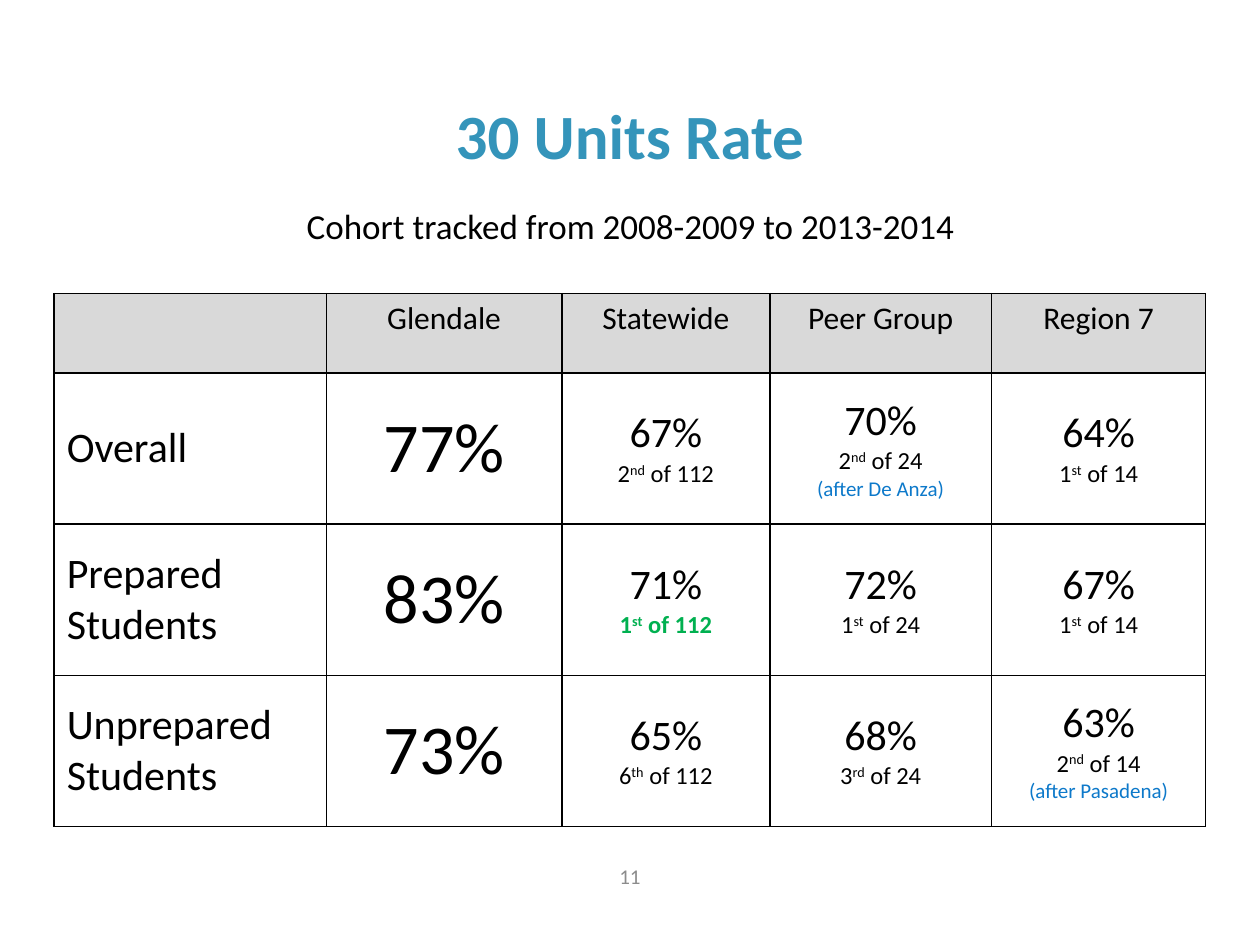
from lxml import etree
from pptx import Presentation, util as u
from pptx.dml.color import RGBColor
from pptx.enum import text
from pptx.oxml.ns import qn

COLS, ROWS = 100, 75
MID = text.PP_ALIGN.CENTER
LEFT = text.PP_ALIGN.LEFT
BLACK, BLUE, GREEN = "000000", "0D79CA", "00B050"

HEADS = ["", "Glendale", "Statewide", "Peer Group", "Region 7"]
RATES = [
    (["Overall"], "77%",
     ["67%", "2nd of 112"],
     ["70%", "2nd of 24", "(after De Anza)"],
     ["64%", "1st of 14"]),
    (["Prepared", "Students"], "83%",
     ["71%", "1st of 112"],
     ["72%", "1st of 24"],
     ["67%", "1st of 14"]),
    (["Unprepared", "Students"], "73%",
     ["65%", "6th of 112"],
     ["68%", "3rd of 24"],
     ["63%", "2nd of 14", "(after Pasadena)"]),
]
BEST = "1st of 112"


def color(code):
    return RGBColor.from_string(code)


class Deck:
    """Holds the style and the current slide; lengths are grid columns and rows."""

    face = "Calibri"

    def __init__(self):
        self.prs = Presentation()
        self.prs.slide_width = u.Inches(10)
        self.prs.slide_height = u.Inches(7.5)
        self.slide = self.prs.slides.add_slide(self.prs.slide_layouts[6])

    def col(self, n):
        return round(self.prs.slide_width * n / COLS)

    def row(self, n):
        return round(self.prs.slide_height * n / ROWS)

    def area(self, x, y, w, h):
        return self.col(x), self.row(y), self.col(w), self.row(h)

    def style(self, par, size, tint=BLACK, bold=False, align=MID):
        par.alignment = align
        font = par.font
        font.name, font.size, font.bold = self.face, u.Pt(size), bold
        font.color.rgb = color(tint)

    def label(self, words, x, y, w, h, size, wrap=True, anchor="TOP", **look):
        frame = self.slide.shapes.add_textbox(*self.area(x, y, w, h)).text_frame
        frame.word_wrap = wrap
        frame.vertical_anchor = text.MSO_ANCHOR[anchor]
        par = frame.paragraphs[0]
        par.add_run().text = words
        self.style(par, size, **look)
        return par

    def table(self, x, y, widths, heights):
        grid = self.slide.shapes.add_table(
            len(heights), len(widths),
            *self.area(x, y, sum(widths), sum(heights))).table
        grid.first_row = grid.horz_banding = False
        for part, n in zip(grid.columns, widths):
            part.width = self.col(n)
        for part, n in zip(grid.rows, heights):
            part.height = self.row(n)
        for cell in grid.iter_cells():
            self.border(cell)
            cell.fill.background()
        return grid

    def border(self, cell):
        props = cell._tc.get_or_add_tcPr()
        for side in ("lnL", "lnR", "lnT", "lnB"):
            line = etree.SubElement(props, qn("a:" + side), w=str(u.Pt(1)))
            fill = etree.SubElement(line, qn("a:solidFill"))
            etree.SubElement(fill, qn("a:srgbClr"), val=BLACK)

    def fill(self, cell, lines, anchor="MIDDLE"):
        """Write one paragraph for each (words, look) pair."""
        cell.vertical_anchor = text.MSO_ANCHOR[anchor]
        frame = cell.text_frame
        for i, (words, look) in enumerate(lines):
            par = frame.add_paragraph() if i else frame.paragraphs[0]
            if " of " in words:
                self.rank(par, words)
            elif words:
                par.add_run().text = words
            self.style(par, **look)

    def rank(self, par, words):
        """Raise the ordinal ending, as in 2nd."""
        place, rest = words.split(" ", 1)
        for piece in (place[:-2], place[-2:], " " + rest):
            run = par.add_run()
            run.text = piece
            if piece == place[-2:]:
                run._r.get_or_add_rPr().set("baseline", "30000")


def look(words):
    """Choose the style of a line in a comparison cell."""
    if words.startswith("("):
        return dict(size=12, tint=BLUE)
    if words == BEST:
        return dict(size=14, tint=GREEN, bold=True)
    return dict(size=14 if " of " in words else 24)


def main():
    deck = Deck()
    deck.label("30 Units Rate", 35, 7.2, 30, 7.1, 36,
               wrap=False, tint="3494BA", bold=True)
    deck.label("11", 40, 67.5, 20, 4, 12, anchor="MIDDLE", tint="8C8C8C")
    note = deck.label("Cohort tracked from 2008-2009 to 2013-2014",
                      10.3, 15.7, 79.5, 4.4, 20)
    note.space_after = u.Pt(24)

    grid = deck.table(4.3, 23.3, [21.6, 18.7, 16.5, 17.6, 17],
                      [6.3] + [12] * len(RATES))
    for i, head in enumerate(HEADS):
        cell = grid.cell(0, i)
        cell.fill.solid()
        cell.fill.fore_color.rgb = color("D9D9D9")
        deck.fill(cell, [(head, dict(size=18))], anchor="TOP")
    for j, (group, rate, *peers) in enumerate(RATES, 1):
        deck.fill(grid.cell(j, 0),
                  [(line, dict(size=24, align=LEFT)) for line in group])
        deck.fill(grid.cell(j, 1), [(rate, dict(size=40))])
        for i, lines in enumerate(peers, 2):
            deck.fill(grid.cell(j, i), [(line, look(line)) for line in lines])

    deck.prs.save("out.pptx")


if __name__ == "__main__":
    main()
